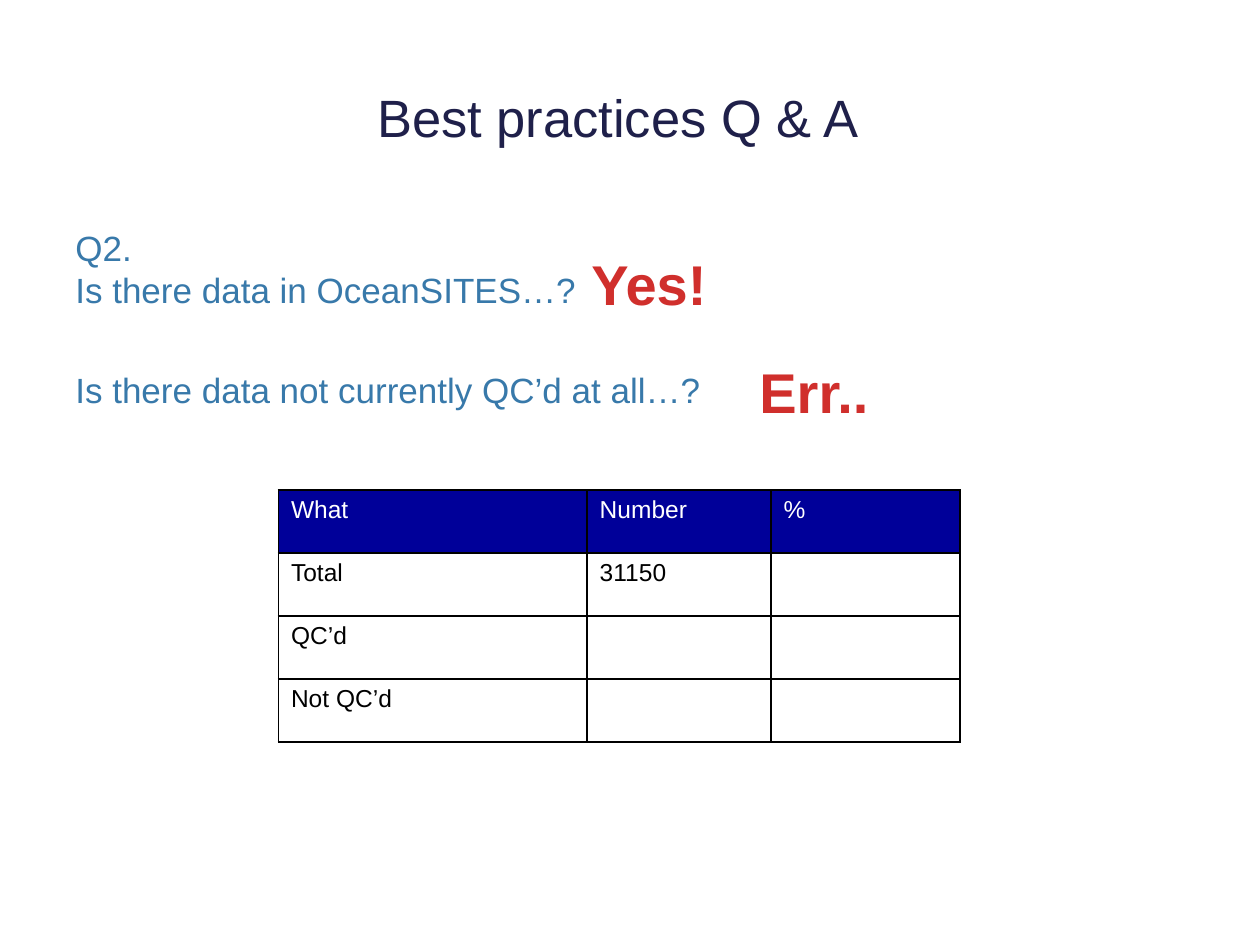
import pptx
import pptx.util
import pptx.dml.color
import pptx.enum.text
import pptx.oxml
import pptx.oxml.ns
from pptx.util import Inches, Pt

RGBColor = pptx.dml.color.RGBColor
ALIGN = pptx.enum.text.PP_ALIGN
ANCHOR = pptx.enum.text.MSO_ANCHOR

NAVY = RGBColor(0x1F, 0x20, 0x4A)
BLUE = RGBColor(0x38, 0x79, 0xAA)
RED = RGBColor(0xD0, 0x2F, 0x2C)
HEADER_FILL = RGBColor(0x00, 0x00, 0x99)
WHITE = RGBColor(0xFF, 0xFF, 0xFF)
BLACK = RGBColor(0x00, 0x00, 0x00)

ROWS = [
    ["What", "Number", "%"],
    ["Total", "31150", ""],
    ["QC’d", "", ""],
    ["Not QC’d", "", ""],
]
COLUMN_WIDTHS = [2.45, 1.46, 1.5]
ROW_HEIGHT = 0.5


def write_text(tf, text, size, color, bold=False, align=ALIGN.LEFT, gap=0):
    """Fill a text frame; newlines part paragraphs, vertical tabs break lines."""
    for i, line in enumerate(text.split("\n")):
        p = tf.paragraphs[0] if i == 0 else tf.add_paragraph()
        p.text = line
        p.alignment = align
        if i:
            p.space_before = Pt(gap)
        p.font.name = "Arial"
        p.font.size = Pt(size)
        p.font.bold = bold
        p.font.color.rgb = color


def add_text(slide, box, text, wrap=True, anchor=ANCHOR.TOP, **text_format):
    tf = slide.shapes.add_textbox(*map(Inches, box)).text_frame
    tf.word_wrap = wrap
    tf.vertical_anchor = anchor
    write_text(tf, text, **text_format)
    return tf


def add_title(slide, box):
    tf = add_text(slide, box, "Best practices Q & A", anchor=ANCHOR.MIDDLE,
                  size=30, color=NAVY, align=ALIGN.CENTER)
    tf.margin_right = Inches(0.29)


def add_questions(slide, box):
    add_text(slide, box,
             "Q2.\vIs there data in OceanSITES…?\n"
             "Is there data not currently QC’d at all…?",
             size=20, color=BLUE, gap=33)


def add_answer(slide, box, text):
    add_text(slide, box, text, wrap=False, size=32, color=RED, bold=True,
             align=ALIGN.CENTER)


def set_borders(cell, color, width):
    tc_pr = cell._tc.get_or_add_tcPr()
    for i, side in enumerate(("lnL", "lnR", "lnT", "lnB")):
        tc_pr.insert(i, pptx.oxml.parse_xml(
            f'<a:{side} {pptx.oxml.ns.nsdecls("a")} w="{Pt(width)}">'
            f'<a:solidFill><a:srgbClr val="{color}"/></a:solidFill></a:{side}>'))


def add_counts_table(slide, left, top):
    frame = slide.shapes.add_table(
        len(ROWS), len(COLUMN_WIDTHS), Inches(left), Inches(top),
        Inches(sum(COLUMN_WIDTHS)), Inches(ROW_HEIGHT * len(ROWS)))
    table = frame.table
    for column, width in zip(table.columns, COLUMN_WIDTHS):
        column.width = Inches(width)
    for r, values in enumerate(ROWS):
        table.rows[r].height = Inches(ROW_HEIGHT)
        for c, value in enumerate(values):
            cell = table.cell(r, c)
            if r == 0:
                cell.fill.solid()
                cell.fill.fore_color.rgb = HEADER_FILL
            else:
                cell.fill.background()
            set_borders(cell, BLACK, 1)
            write_text(cell.text_frame, value, size=14,
                       color=WHITE if r == 0 else BLACK)


def main():
    prs = pptx.Presentation()
    prs.slide_width, prs.slide_height = Inches(10), Inches(7.5)
    slide = prs.slides.add_slide(prs.slide_layouts[6])
    add_title(slide, (0.5, 0.3, 9, 1.25))
    add_questions(slide, (0.5, 1.75, 9, 4.95))
    add_answer(slide, (4.59, 1.93, 1.12, 0.64), "Yes!")
    add_counts_table(slide, 2.21, 3.89)
    add_answer(slide, (5.92, 2.79, 1.08, 0.64), "Err..")
    prs.save("out.pptx")


if __name__ == "__main__":
    main()
